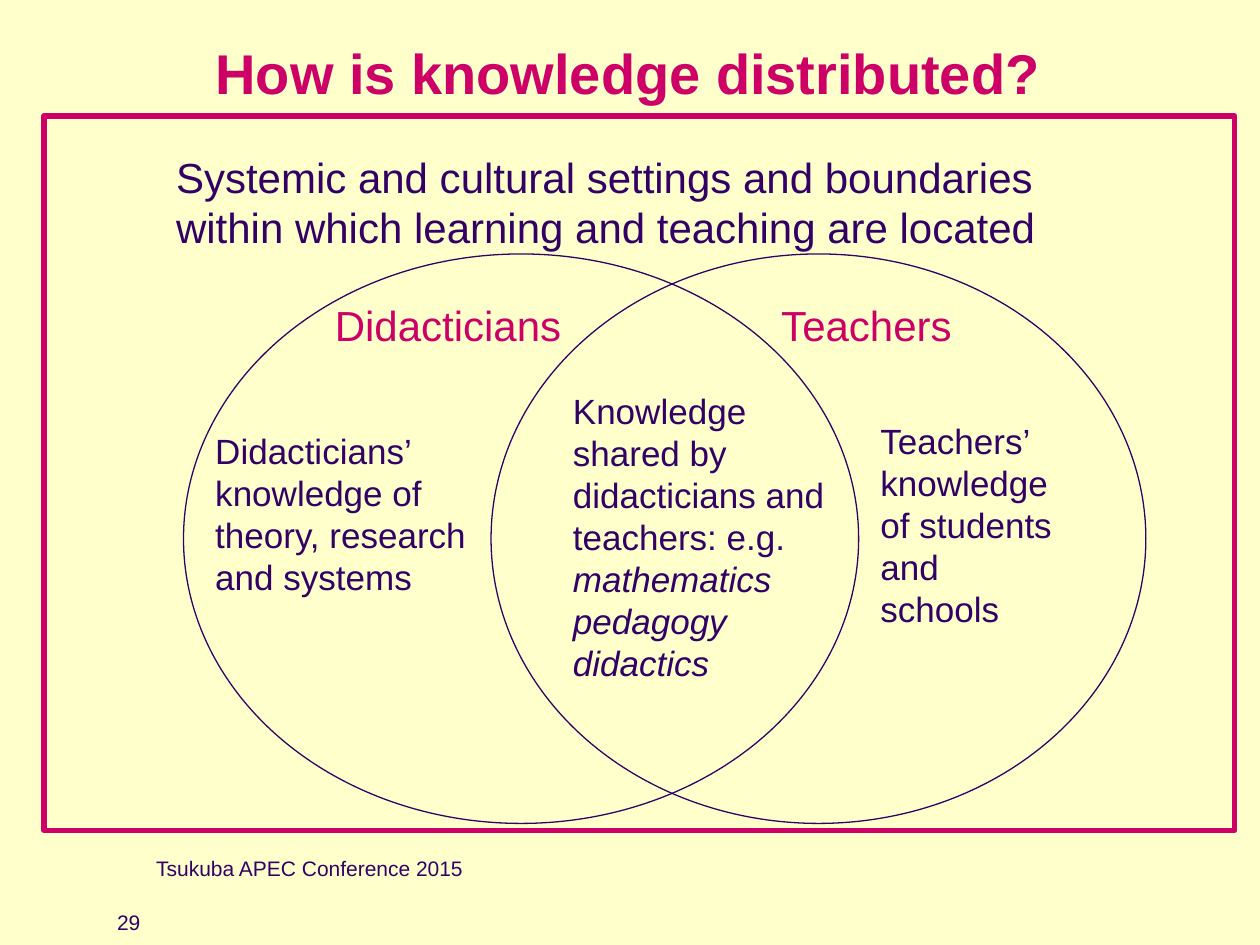
from dataclasses import dataclass

from pptx import Presentation
from pptx import util as u
from pptx.dml import color
from pptx.enum import shapes, text


@dataclass(frozen=True)
class Theme:
    font: str = "Arial"
    paper: color.RGBColor = color.RGBColor(0xFF, 0xFF, 0xCC)
    ink: color.RGBColor = color.RGBColor(0x33, 0x00, 0x66)
    accent: color.RGBColor = color.RGBColor(0xCC, 0x00, 0x66)
    title: int = 32
    heading: int = 24
    body: int = 20
    footer: int = 12


THEME = Theme()


def box(left, top, width, height):
    return [u.Cm(length) for length in (left, top, width, height)]


def write(frame, paragraphs, size=THEME.body, ink=THEME.ink, bold=False,
          italic_from=None, wrap=False, spacing=None):
    frame.word_wrap = wrap
    frame.auto_size = text.MSO_AUTO_SIZE.NONE
    frame.vertical_anchor = text.MSO_ANCHOR.TOP
    for index, content in enumerate(paragraphs):
        paragraph = frame.paragraphs[0] if index == 0 else frame.add_paragraph()
        paragraph.text = content
        paragraph.alignment = text.PP_ALIGN.LEFT
        paragraph.space_before = u.Pt(0)
        if spacing:
            paragraph.line_spacing = spacing
        for run in paragraph.runs:
            run.font.name = THEME.font
            run.font.size = u.Pt(size)
            run.font.color.rgb = ink
            run.font.bold = bold
            run.font.italic = italic_from is not None and index >= italic_from


def add_label(slide, place, *paragraphs, **style):
    label = slide.shapes.add_textbox(*box(*place))
    write(label.text_frame, paragraphs, **style)


def add_outline(slide, preset, place, line, weight, fill=None):
    outline = slide.shapes.add_shape(preset, *box(*place))
    outline.shadow.inherit = False
    if fill is None:
        outline.fill.background()
    else:
        outline.fill.solid()
        outline.fill.fore_color.rgb = fill
    outline.line.color.rgb = line
    outline.line.width = u.Pt(weight)


def set_title(slide, place, content):
    title = slide.shapes.title
    title.left, title.top, title.width, title.height = box(*place)
    write(title.text_frame, [content], size=THEME.title, ink=THEME.accent,
          bold=True, spacing=0.8)


def add_venn(slide):
    kind = shapes.MSO_SHAPE
    add_outline(slide, kind.RECTANGLE, (0.89, 2.34, 24, 14.4),
                THEME.accent, 3, THEME.paper)
    for left, width in ((3.7, 13.61), (9.9, 13.2)):
        add_outline(slide, kind.OVAL, (left, 5.12, width, 11.48),
                    THEME.ink, 0.75)


def add_knowledge(slide):
    add_label(slide, (3.3, 2.92, 18.21, 2.31),
              "Systemic and cultural settings and boundaries \n"
              "within which learning and teaching are located",
              size=THEME.heading)
    for left, width, group in ((6.5, 5.13, "Didacticians"),
                               (15.5, 3.99, "Teachers")):
        add_label(slide, (left, 5.92, width, 1.27), group,
                  size=THEME.heading, ink=THEME.accent)
    add_label(slide, (4.09, 8.53, 6, 3.68),
              "Didacticians’ \nknowledge of \ntheory, research \nand systems",
              wrap=True)
    add_label(slide, (11.3, 7.72, 5.82, 6.25),
              "Knowledge \nshared by \ndidacticians and \nteachers: e.g.",
              "mathematics \npedagogy", "didactics", italic_from=1)
    add_label(slide, (17.5, 8.33, 4.19, 4.52),
              "Teachers’ \nknowledge \nof students \nand \nschools")


def add_footer(slide):
    add_label(slide, (2.9, 17.12, 15.88, 1.07),
              "Tsukuba APEC Conference 2015", size=THEME.footer, wrap=True)
    add_label(slide, (2.11, 18.21, 1.7, 0.53), "29",
              size=THEME.footer, wrap=True)


def main():
    deck = Presentation()
    deck.slide_width, deck.slide_height = u.Cm(25.4), u.Cm(19.05)
    slide = deck.slides.add_slide(deck.slide_layouts.get_by_name("Title Only"))
    slide.background.fill.solid()
    slide.background.fill.fore_color.rgb = THEME.paper
    set_title(slide, (4.09, 0.91, 17.27, 1.35), "How is knowledge distributed?")
    add_venn(slide)
    add_knowledge(slide)
    add_footer(slide)
    deck.save("out.pptx")


if __name__ == "__main__":
    main()
